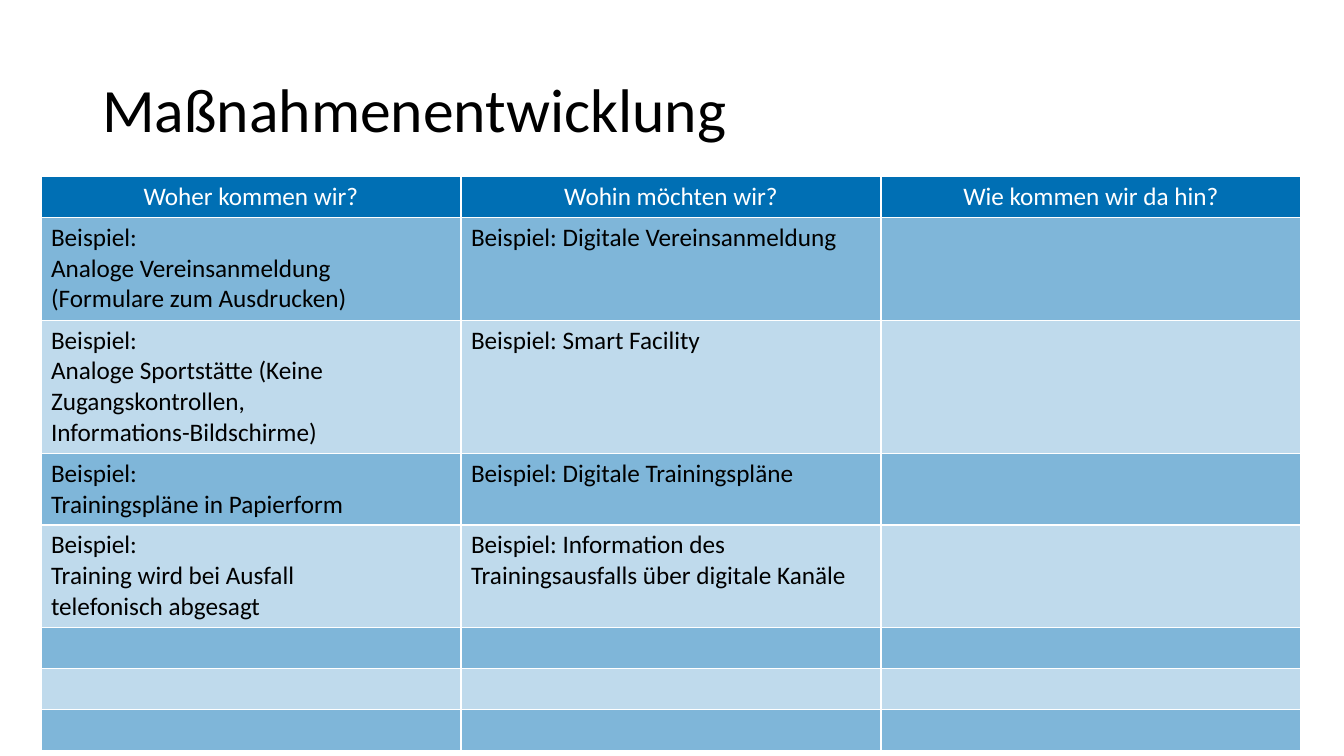
from dataclasses import dataclass

from lxml.etree import SubElement
from pptx import Presentation
from pptx.dml.color import RGBColor
from pptx.enum.text import MSO_ANCHOR, PP_ALIGN
from pptx.oxml import parse_xml
from pptx.oxml.ns import nsdecls, qn
from pptx.util import Pt

EMU_PER_PX = 9525


@dataclass(frozen=True)
class Theme:
    font: str = "Calibri"
    title_size: int = 44
    table_size: int = 18
    blue: str = "006FB4"
    white: str = "FFFFFF"
    black: str = "000000"
    border_width: int = 1
    odd_opacity: int = 50
    even_opacity: int = 25


THEME = Theme()

HEADERS = ["Woher kommen wir?", "Wohin möchten wir?", "Wie kommen wir da hin?"]
MEASURES = [
    (["Beispiel:", "Analoge Vereinsanmeldung", "(Formulare zum Ausdrucken)"],
     ["Beispiel: Digitale Vereinsanmeldung"]),
    (["Beispiel:", "Analoge Sportstätte (Keine Zugangskontrollen,",
      "Informations-Bildschirme)"],
     ["Beispiel: Smart Facility"]),
    (["Beispiel:", "Trainingspläne in Papierform"],
     ["Beispiel: Digitale Trainingspläne"]),
    (["Beispiel:", "Training wird bei Ausfall", "telefonisch abgesagt"],
     ["Beispiel: Information des Trainingsausfalls über digitale Kanäle"]),
]
ROW_HEIGHTS = [39, 98, 127, 68, 98, 39, 39, 39]
COLUMN_WIDTH = 400


def px(length):
    return length * EMU_PER_PX


def add_run(paragraph, text, size, color):
    run = paragraph.add_run()
    run.text = text
    run.font.name = THEME.font
    run.font.size = Pt(size)
    run.font.bold = False
    run.font.color.rgb = RGBColor.from_string(color)


def add_title(slide, text, left, top, width, height):
    frame = slide.shapes.add_textbox(px(left), px(top), px(width), px(height)).text_frame
    frame.word_wrap = True
    frame.vertical_anchor = MSO_ANCHOR.MIDDLE
    paragraph = frame.paragraphs[0]
    paragraph.line_spacing = 0.9
    add_run(paragraph, text, THEME.title_size, THEME.black)


def set_borders(cell):
    properties = cell._tc.get_or_add_tcPr()
    for index, side in enumerate(("lnL", "lnR", "lnT", "lnB")):
        properties.insert(index, parse_xml(
            f'<a:{side} {nsdecls("a")} w="{Pt(THEME.border_width)}"><a:solidFill>'
            f'<a:srgbClr val="{THEME.white}"/></a:solidFill></a:{side}>'))


def set_fill(cell, opacity):
    cell.fill.solid()
    cell.fill.fore_color.rgb = RGBColor.from_string(THEME.blue)
    if opacity < 100:
        color = cell._tc.tcPr.find(qn("a:solidFill")).find(qn("a:srgbClr"))
        SubElement(color, qn("a:alpha")).set("val", str(opacity * 1000))


def fill_cell(cell, lines, color, alignment, opacity):
    frame = cell.text_frame
    for index, line in enumerate(lines):
        paragraph = frame.add_paragraph() if index else frame.paragraphs[0]
        paragraph.alignment = alignment
        add_run(paragraph, line, THEME.table_size, color)
    set_fill(cell, opacity)
    set_borders(cell)


def add_measures_table(slide, left, top):
    table = slide.shapes.add_table(
        len(ROW_HEIGHTS), len(HEADERS), px(left), px(top),
        px(COLUMN_WIDTH * len(HEADERS)), px(sum(ROW_HEIGHTS))).table
    for column in table.columns:
        column.width = px(COLUMN_WIDTH)
    for row, height in zip(table.rows, ROW_HEIGHTS):
        row.height = px(height)
    for index, header in enumerate(HEADERS):
        fill_cell(table.cell(0, index), [header], THEME.white, PP_ALIGN.CENTER, 100)
    for row_index in range(1, len(ROW_HEIGHTS)):
        texts = MEASURES[row_index - 1] if row_index <= len(MEASURES) else ()
        opacity = THEME.odd_opacity if row_index % 2 else THEME.even_opacity
        for index in range(len(HEADERS)):
            lines = texts[index] if index < len(texts) else []
            fill_cell(table.cell(row_index, index), lines, THEME.black,
                      PP_ALIGN.LEFT, opacity)


def main():
    presentation = Presentation()
    presentation.slide_width = px(1280)
    presentation.slide_height = px(720)
    slide = presentation.slides.add_slide(presentation.slide_layouts[6])
    add_title(slide, "Maßnahmenentwicklung", 88, 38, 1104, 139)
    add_measures_table(slide, 39, 168)
    presentation.save("out.pptx")


if __name__ == "__main__":
    main()
